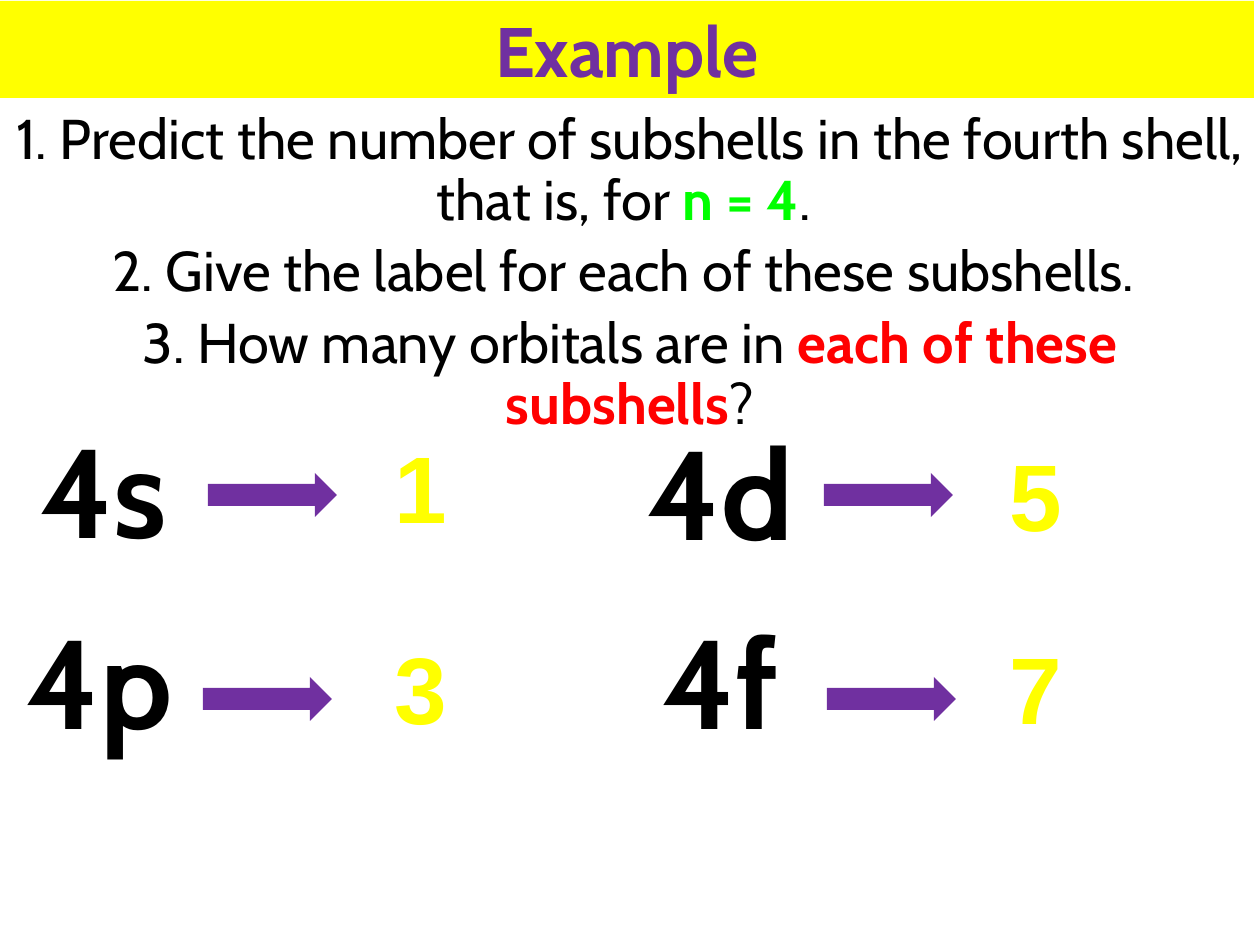
from dataclasses import dataclass

from lxml import etree
from pptx import Presentation
from pptx import util as u
from pptx.dml.color import RGBColor
from pptx.enum import shapes, text
from pptx.oxml.ns import qn

SCALE = 914400 // 126  # EMU in one px


@dataclass(frozen=True)
class Theme:
    font: str = "Cabin"
    digit: str = "Arial"
    black: str = "000000"
    yellow: str = "FFFF00"
    purple: str = "7030A0"
    green: str = "00FF00"
    red: str = "FF0000"
    title: int = 40
    body: int = 32
    label: int = 72
    answer: int = 54


T = Theme()

# Each subshell: label, label spot, arrow spot, answer, answer spot
SHELLS = [
    ("4s", (0, 423), (208, 473), "1", (382, 423)),
    ("4p", (-4, 614), (203, 677), "3", (382, 624)),
    ("4d", (617, 425), (824, 473), "5", (997, 431)),
    ("4f", (617, 614), (827, 677), "7", (997, 624)),
]

TASKS = [
    [("1. Predict the number of subshells in the fourth shell, that is, for ", T.black, False),
     ("n = 4", T.green, True), (". ", T.black, False)],
    [("2. Give the label for each of these subshells. ", T.black, False)],
    [("3. How many orbitals are in ", T.black, False),
     ("each of these subshells", T.red, True), ("?", T.black, False)],
]


def px(*vals):
    return [u.Emu(val * SCALE) for val in vals]


def paint(shape, color):
    shape.fill.solid()
    shape.fill.fore_color.rgb = RGBColor.from_string(color)


def place(shape, *box):
    shape.left, shape.top, shape.width, shape.height = px(*box)


def add_run(para, words, size, color, bold=True, font=T.font, edge=0):
    """Add one run; edge is the width in points of a black outline."""
    run = para.add_run()
    run.text = words
    run.font.name = font
    run.font.size = u.Pt(size)
    run.font.bold = bold
    run.font.color.rgb = RGBColor.from_string(color)
    if edge:
        line = etree.Element(qn("a:ln"), w=str(u.Pt(edge)))
        fill = etree.SubElement(line, qn("a:solidFill"))
        etree.SubElement(fill, qn("a:srgbClr"), val=T.black)
        run.font._element.insert(0, line)


def add_title(slide):
    title = slide.shapes.title
    place(title, 0, 1, 1254, 97)
    paint(title, T.yellow)
    frame = title.text_frame
    frame.auto_size = text.MSO_AUTO_SIZE.NONE
    frame.vertical_anchor = text.MSO_ANCHOR.MIDDLE
    para = frame.paragraphs[0]
    para.alignment = text.PP_ALIGN.CENTER
    add_run(para, "Example", T.title, T.purple, edge=1)


def add_tasks(slide):
    body = slide.placeholders[1]
    place(body, 0, 105, 1260, 329)
    frame = body.text_frame
    frame.auto_size = text.MSO_AUTO_SIZE.NONE
    frame.vertical_anchor = text.MSO_ANCHOR.TOP
    for num, task in enumerate(TASKS):
        para = frame.add_paragraph() if num else frame.paragraphs[0]
        props = para._p.get_or_add_pPr()
        props.set("marL", "0")
        props.set("indent", "0")
        etree.SubElement(props, qn("a:buNone"))
        para.alignment = text.PP_ALIGN.CENTER
        para.line_spacing = 0.9
        para.space_before = u.Pt(T.body * 0.2 if num else 0)
        for words, color, bold in task:
            add_run(para, words, T.body, color, bold)


def add_box(slide, spot, size, wrap):
    """Add a centred text box and return its paragraph."""
    frame = slide.shapes.add_textbox(*px(*spot, *size)).text_frame
    frame.word_wrap = wrap
    para = frame.paragraphs[0]
    para.alignment = text.PP_ALIGN.CENTER
    return para


def add_label(slide, words, spot):
    para = add_box(slide, spot, (207, 139), True)
    para.line_spacing = 0.9
    add_run(para, words, T.label, T.black)


def add_answer(slide, words, spot):
    para = add_box(slide, spot, (78, 127), False)
    add_run(para, words, T.answer, T.yellow, font=T.digit, edge=0.71)


def add_arrow(slide, spot):
    kind = shapes.MSO_SHAPE.RIGHT_ARROW
    arrow = slide.shapes.add_shape(kind, *px(*spot, 129, 44))
    arrow.shadow.inherit = False
    paint(arrow, T.purple)
    arrow.line.fill.background()


def main():
    deck = Presentation()
    deck.slide_width, deck.slide_height = px(1260, 945)
    slide = deck.slides.add_slide(deck.slide_layouts[1])
    add_title(slide)
    add_tasks(slide)
    for label, start, mid, answer, end in SHELLS:
        add_label(slide, label, start)
        add_arrow(slide, mid)
        add_answer(slide, answer, end)
    deck.save("out.pptx")


if __name__ == "__main__":
    main()
